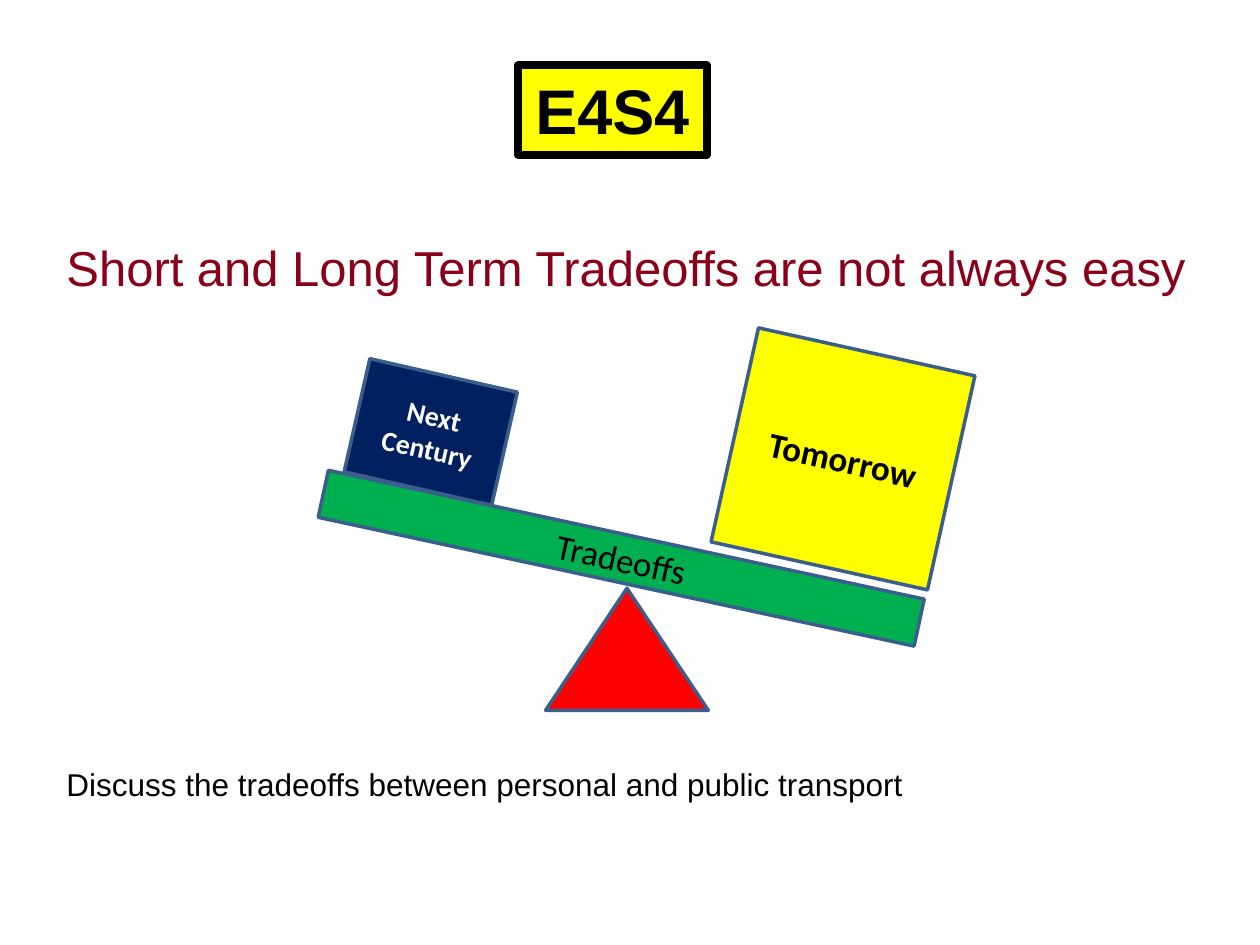
from pptx import Presentation
from pptx.dml.color import RGBColor
from pptx.enum.shapes import MSO_SHAPE
from pptx.enum.text import MSO_ANCHOR, PP_ALIGN
from pptx.util import Cm, Pt


def color(value):
    return RGBColor.from_string(value)


class SlideBuilder:
    """Holds the slide style and draws each kind of element."""

    black, yellow, outline = "000000", "FFFF00", "3A5F8C"
    heading_font, seesaw_font = "Arial", "Calibri"

    def __init__(self, slide):
        self.s = slide
        self.group = slide.shapes.add_group_shape()

    def label(self, sp, text, size, font, ink, bold=False, align=PP_ALIGN.CENTER,
              anchor=MSO_ANCHOR.MIDDLE, wrap=True):
        tf = sp.text_frame
        tf.text = text
        tf.word_wrap = wrap
        tf.vertical_anchor = anchor
        p = tf.paragraphs[0]
        p.alignment = align
        r = p.runs[0]
        r.font.name = font
        r.font.size = Pt(size)
        r.font.bold = bold
        r.font.color.rgb = color(ink)

    def shape(self, shapes, kind, box, fill, line, width):
        sp = shapes.add_shape(kind, *map(Cm, box))
        sp.shadow.inherit = False
        sp.fill.solid()
        sp.fill.fore_color.rgb = color(fill)
        sp.line.color.rgb = color(line)
        sp.line.width = Pt(width)
        return sp

    def pivot(self, box, fill):
        self.shape(self.group.shapes, MSO_SHAPE.ISOSCELES_TRIANGLE, box, fill, self.outline, 2)

    def block(self, text, box, angle, fill, size, ink, bold=True):
        sp = self.shape(self.group.shapes, MSO_SHAPE.RECTANGLE, box, fill, self.outline, 2)
        sp.rotation = angle
        self.label(sp, text, size, self.seesaw_font, ink, bold)

    def badge(self, text, box):
        sp = self.shape(self.s.shapes, MSO_SHAPE.RECTANGLE, box, self.yellow, self.black, 4.5)
        self.label(sp, text, 36, self.heading_font, self.black, True,
                   anchor=MSO_ANCHOR.TOP, wrap=False)

    def text(self, text, box, size, ink):
        sp = self.s.shapes.add_textbox(*map(Cm, box))
        self.label(sp, text, size, self.heading_font, ink,
                   align=PP_ALIGN.LEFT, anchor=MSO_ANCHOR.TOP)


def main():
    prs = Presentation()
    prs.slide_width, prs.slide_height = Cm(25.4), Cm(19.05)
    b = SlideBuilder(prs.slides.add_slide(prs.slide_layouts[6]))
    b.pivot((11, 11.86, 3.28, 2.46), "FF0000")
    b.block("Tradeoffs", (6.38, 10.77, 12.29, 0.97), 12.2, "00B050", 20, b.black, False)
    b.block("Tomorrow", (14.76, 7.04, 4.47, 4.42), 12.5, b.yellow, 20, b.black)
    b.block("Next Century", (7.16, 7.54, 3.05, 2.34), 12.8, "002060", 16, "FFFFFF")
    b.text("Short and Long Term Tradeoffs are not always easy",
           (1.09, 4.67, 23.19, 1.45), 28, "890018")
    b.badge("E4S4", (10.44, 1.32, 3.81, 1.8))
    b.text("Discuss the tradeoffs between personal and public transport",
           (1.09, 15.29, 17.53, 1.02), 18, b.black)
    prs.save("out.pptx")


if __name__ == "__main__":
    main()
